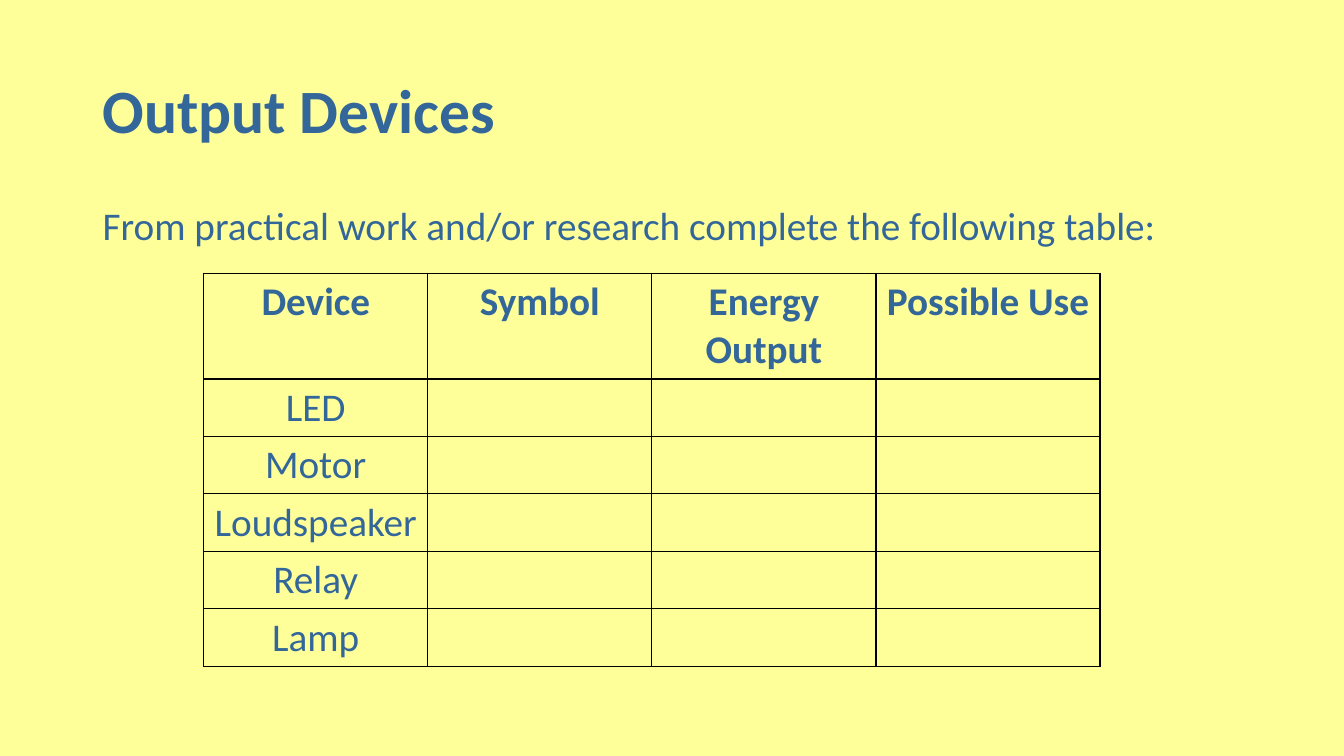
from lxml import etree
from pptx import Presentation
from pptx.dml.color import RGBColor
from pptx.enum import text
from pptx.oxml.ns import qn
from pptx.util import Inches, Pt

# Content
TITLE = "Output Devices"
TASK = "From practical work and/or research complete the following table:"
HEADERS = ["Device", "Symbol", "Energy Output", "Possible Use"]
DEVICES = ["LED", "Motor", "Loudspeaker", "Relay", "Lamp"]
COLORS = {"bg": "FFFF99", "text": "336699", "border": "000000"}
FONT = "Calibri"
TABLE_X, TABLE_Y, TABLE_W = 2.02, 2.71, 8.89
HEADER_H, ROW_H = 1.05, 0.57


def write(tf, words, size=28, bold=False, align=None, spacing=None, before=None):
    p = tf.paragraphs[0]
    p.alignment = align
    p.line_spacing = spacing
    p.space_before = before
    r = p.add_run()
    r.text = words
    r.font.name, r.font.size, r.font.bold = FONT, Pt(size), bold
    r.font.color.rgb = RGBColor.from_string(COLORS["text"])


def add_text(s, box, words, anchor, **fmt):
    tf = s.shapes.add_textbox(*map(Inches, box)).text_frame
    tf.word_wrap = True
    tf.vertical_anchor = anchor
    write(tf, words, spacing=0.9, **fmt)


def add_borders(cell):
    tcPr = cell._tc.get_or_add_tcPr()
    for side in ("a:lnL", "a:lnR", "a:lnT", "a:lnB"):
        ln = etree.SubElement(tcPr, qn(side), w=str(Pt(1)))
        fill = etree.SubElement(ln, qn("a:solidFill"))
        etree.SubElement(fill, qn("a:srgbClr"), val=COLORS["border"])


prs = Presentation()
prs.slide_width, prs.slide_height = Inches(13.33), Inches(7.5)
s = prs.slides.add_slide(prs.slide_layouts[6])
s.background.fill.solid()
s.background.fill.fore_color.rgb = RGBColor.from_string(COLORS["bg"])

# Title and task
add_text(s, (0.92, 0.4, 11.5, 1.45), TITLE, text.MSO_ANCHOR.MIDDLE, size=44, bold=True)
add_text(s, (0.92, 2, 11.5, 4.76), TASK, text.MSO_ANCHOR.TOP, before=Pt(10))

# Table to complete
rows = [HEADERS] + [[device] + [""] * (len(HEADERS) - 1) for device in DEVICES]
heights = [HEADER_H] + [ROW_H] * len(DEVICES)
table = s.shapes.add_table(len(rows), len(HEADERS), Inches(TABLE_X), Inches(TABLE_Y),
                           Inches(TABLE_W), Inches(sum(heights))).table
table.first_row = table.horz_banding = False
for col in table.columns:
    col.width = Inches(TABLE_W / len(HEADERS))
for i, (row, height) in enumerate(zip(rows, heights)):
    table.rows[i].height = Inches(height)
    for j, words in enumerate(row):
        cell = table.cell(i, j)
        add_borders(cell)
        cell.fill.background()
        if words:
            write(cell.text_frame, words, bold=i == 0, align=text.PP_ALIGN.CENTER)

prs.save("out.pptx")
